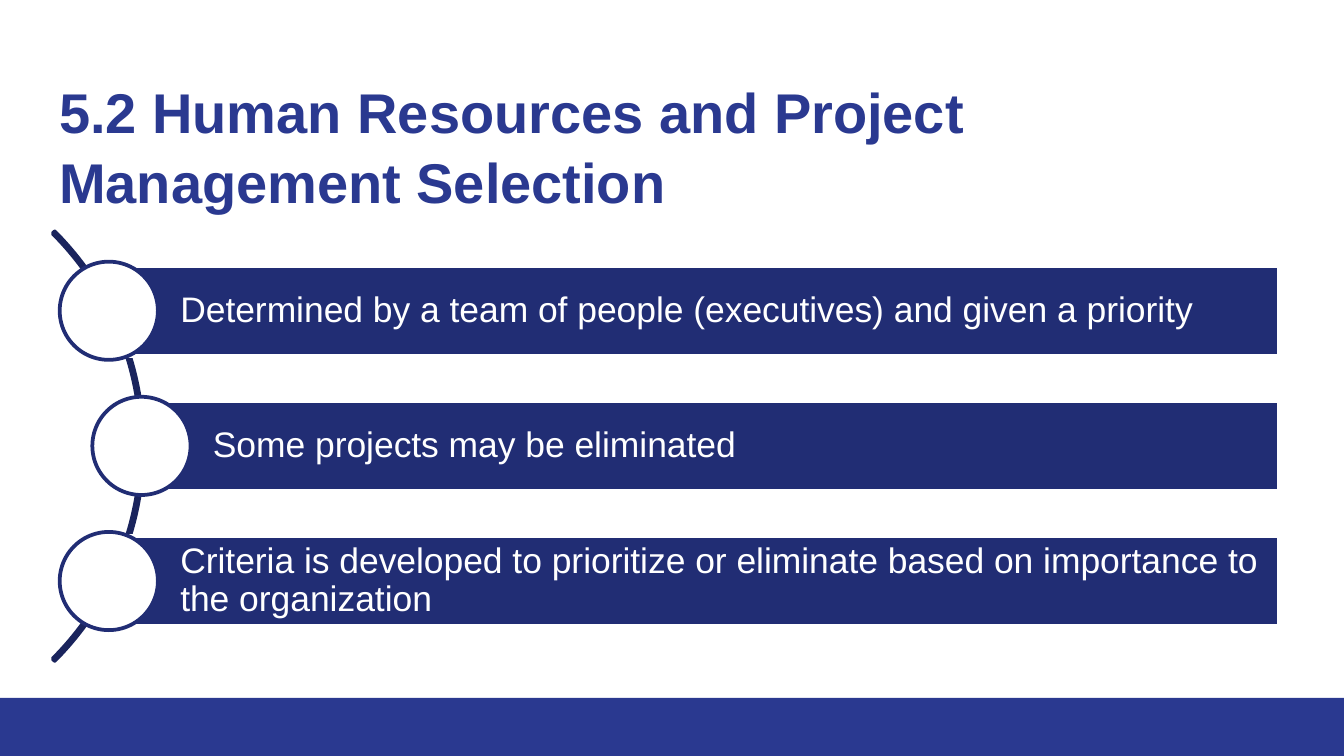
from pptx import Presentation
from pptx.dml.color import RGBColor
from pptx.enum.shapes import MSO_SHAPE
from pptx.enum.text import MSO_ANCHOR, MSO_AUTO_SIZE, PP_ALIGN
from pptx.util import Pt

BLUE = RGBColor(0x2A, 0x39, 0x90)
NAVY = RGBColor(0x21, 0x2D, 0x74)
DARK = RGBColor(0x1A, 0x24, 0x5D)
WHITE = RGBColor(0xFF, 0xFF, 0xFF)

WIDTH, HEIGHT = 720, 405
BAND_TOP = 373.9
BAR_TOP, BAR_HEIGHT, BAR_RIGHT = 142.4, 48.2, 685.2
BAR_PITCH = 72.4
CIRCLE = 52.6
ITEMS = [
    (58.3, "Determined by a team of people (executives) and given a priority"),
    (75.8, "Some projects may be eliminated"),
    (58.3, "Criteria is developed to prioritize or eliminate based on "
           "importance to the organization"),
]


def write_text(sp, text, size, color, bold=False, anchor=MSO_ANCHOR.TOP,
               insets=(7.2, 7.2, 7.2, 7.2), spacing=1.0):
    tf = sp.text_frame
    tf.word_wrap = True
    tf.auto_size = MSO_AUTO_SIZE.NONE
    tf.vertical_anchor = anchor
    tf.margin_left, tf.margin_top, tf.margin_right, tf.margin_bottom = map(Pt, insets)
    p = tf.paragraphs[0]
    p.alignment = PP_ALIGN.LEFT
    p.line_spacing = spacing
    p.space_before = Pt(0)
    r = p.add_run()
    r.text = text
    r.font.name = "Arial"
    r.font.size = Pt(size)
    r.font.bold = bold
    r.font.color.rgb = color


class SlideBuilder:
    def __init__(self, s):
        self.s = s
        s.background.fill.solid()
        s.background.fill.fore_color.rgb = WHITE

    def shape(self, kind, left, top, width, height, fill=None, line=None):
        sp = self.s.shapes.add_shape(kind, Pt(left), Pt(top), Pt(width), Pt(height))
        sp.shadow.inherit = False
        if fill is None:
            sp.fill.background()
        else:
            sp.fill.solid()
            sp.fill.fore_color.rgb = fill
        if line is None:
            sp.line.fill.background()
        else:
            sp.line.color.rgb = line
            sp.line.width = Pt(2)
        return sp

    def title(self, text):
        sp = self.s.shapes.title
        sp.left, sp.top, sp.width, sp.height = Pt(24.5), Pt(33), Pt(671), Pt(47.5)
        write_text(sp, text, 30, BLUE, bold=True, spacing=1.04)

    def arc(self, left, top, size):
        sp = self.shape(MSO_SHAPE.BLOCK_ARC, left, top, size, size, line=DARK)
        for i, value in enumerate((189, 27, 0.005)):
            sp.adjustments[i] = value

    def item(self, left, top, text):
        bar = self.shape(MSO_SHAPE.RECTANGLE, left, top, BAR_RIGHT - left,
                         BAR_HEIGHT, NAVY, WHITE)
        write_text(bar, text, 19, WHITE, anchor=MSO_ANCHOR.MIDDLE,
                   insets=(38.3, 3.6, 3.6, 3.6), spacing=0.9)
        self.shape(MSO_SHAPE.OVAL, left - CIRCLE / 2,
                   top + (BAR_HEIGHT - CIRCLE) / 2, CIRCLE, CIRCLE, WHITE, NAVY)


def main():
    prs = Presentation()
    prs.slide_width, prs.slide_height = Pt(WIDTH), Pt(HEIGHT)
    slide = SlideBuilder(prs.slides.add_slide(prs.slide_layouts[5]))
    slide.shape(MSO_SHAPE.RECTANGLE, 0, BAND_TOP, WIDTH, HEIGHT - BAND_TOP, BLUE)
    slide.title("5.2 Human Resources and Project Management Selection")
    slide.arc(-248.4, 76.3, 325.4)
    for i, (left, text) in enumerate(ITEMS):
        slide.item(left, BAR_TOP + i * BAR_PITCH, text)
    prs.save("out.pptx")


if __name__ == "__main__":
    main()
